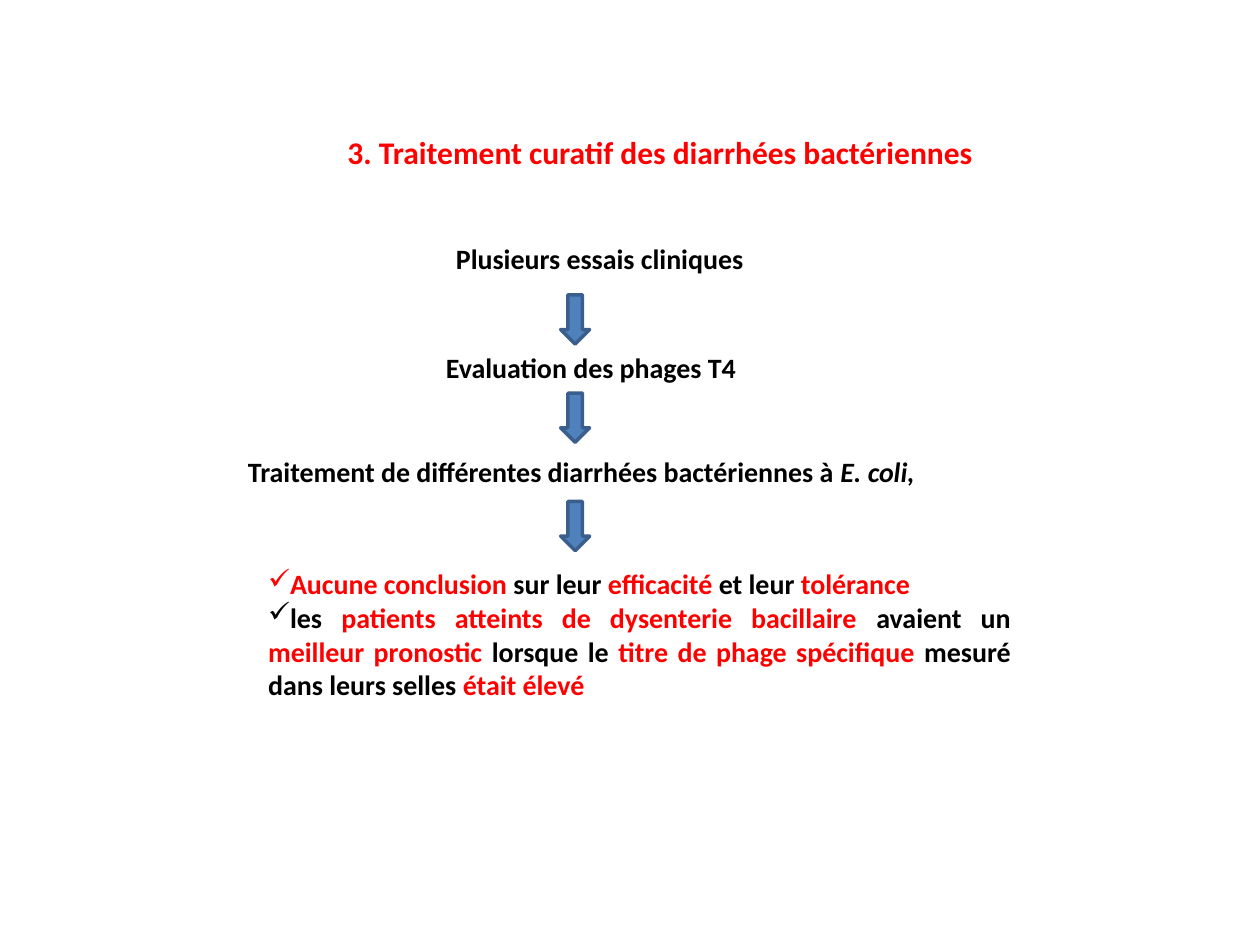
"""Build the slide on curative phage treatment of bacterial diarrhoea."""
from dataclasses import dataclass

from lxml.etree import SubElement
from pptx import Presentation
from pptx.dml.color import RGBColor
from pptx.enum.shapes import MSO_SHAPE as Shape
from pptx.enum.text import MSO_AUTO_SIZE as AutoSize, PP_ALIGN as Align
from pptx.oxml.ns import qn
from pptx.util import Inches, Pt

COLORS = {"black": "000000", "red": "FF0000", "arrow": "4F81BD", "edge": "3A5F8C"}
FONT = {"name": "Calibri", "bold": True}
FRAME = {"auto_size": AutoSize.SHAPE_TO_FIT_TEXT}
ARROW_LEFT, ARROW_WIDTH, ARROW_HEIGHT = 4.45, 0.23, 0.39
ARROW_TOPS = (2.34, 3.12, 3.98)


@dataclass(frozen=True)
class Run:
    text: str
    color: str = "black"
    italic: bool = False


@dataclass(frozen=True)
class Para:
    runs: tuple[Run, ...]
    align: Align = Align.LEFT
    bullet: str = ""


@dataclass(frozen=True)
class Box:
    left: float
    top: float
    width: float
    height: float
    paras: tuple[Para, ...]
    size: int = 16
    wrap: bool = True


BOXES = (
    Box(2.66, 1.01, 5.2, 0.4, (
        Para((Run("3. Traitement curatif des diarrhées bactériennes", "red"),)),
    ), size=18, wrap=False),
    Box(3.52, 1.87, 3.05, 0.37, (Para((Run("Plusieurs essais cliniques"),)),)),
    Box(3.44, 2.73, 3.05, 0.37, (Para((Run("Evaluation des phages T4"),)),)),
    Box(1.87, 3.56, 6.56, 0.37, (
        Para((
            Run("Traitement de différentes diarrhées bactériennes à "),
            Run("E. coli,", italic=True),
        )),
    )),
    Box(2.03, 4.45, 6.09, 1.18, (
        Para((
            Run("Aucune conclusion ", "red"),
            Run("sur leur "),
            Run("efficacité", "red"),
            Run(" et leur "),
            Run("tolérance", "red"),
        ), bullet="✓"),
        Para((
            Run("les "),
            Run("patients atteints de dysenterie bacillaire", "red"),
            Run(" avaient un "),
            Run("meilleur pronostic", "red"),
            Run(" lorsque le "),
            Run("titre de phage spécifique ", "red"),
            Run("mesuré dans leurs selles "),
            Run("était élevé", "red"),
        ), Align.JUSTIFY, "✓"),
    )),
)


def rgb(name: str) -> RGBColor:
    """Return the named colour."""
    return RGBColor.from_string(COLORS[name])


def add_box(s, box: Box) -> None:
    """Add a text box with its paragraphs and runs."""
    sp = s.shapes.add_textbox(*map(Inches, (box.left, box.top, box.width, box.height)))
    tf = sp.text_frame
    for key, value in {**FRAME, "word_wrap": box.wrap}.items():
        setattr(tf, key, value)
    for i, para in enumerate(box.paras):
        p = tf.add_paragraph() if i else tf.paragraphs[0]
        p.alignment = para.align
        if para.bullet:
            SubElement(p._p.get_or_add_pPr(), qn("a:buChar")).set("char", para.bullet)
        for run in para.runs:
            r = p.add_run()
            r.text = run.text
            style = {**FONT, "size": Pt(box.size), "italic": run.italic}
            for key, value in style.items():
                setattr(r.font, key, value)
            r.font.color.rgb = rgb(run.color)


def add_arrow(s, top: float) -> None:
    """Add a down arrow between two steps."""
    sp = s.shapes.add_shape(
        Shape.DOWN_ARROW, *map(Inches, (ARROW_LEFT, top, ARROW_WIDTH, ARROW_HEIGHT))
    )
    sp.shadow.inherit = False
    sp.fill.solid()
    sp.fill.fore_color.rgb = rgb("arrow")
    sp.line.color.rgb = rgb("edge")
    sp.line.width = Pt(2)


def main() -> None:
    """Build and save the slide."""
    prs = Presentation()
    prs.slide_width, prs.slide_height = Inches(10), Inches(7.5)
    s = prs.slides.add_slide(prs.slide_layouts[6])
    for box in BOXES:
        add_box(s, box)
    for top in ARROW_TOPS:
        add_arrow(s, top)
    prs.save("out.pptx")


if __name__ == "__main__":
    main()
